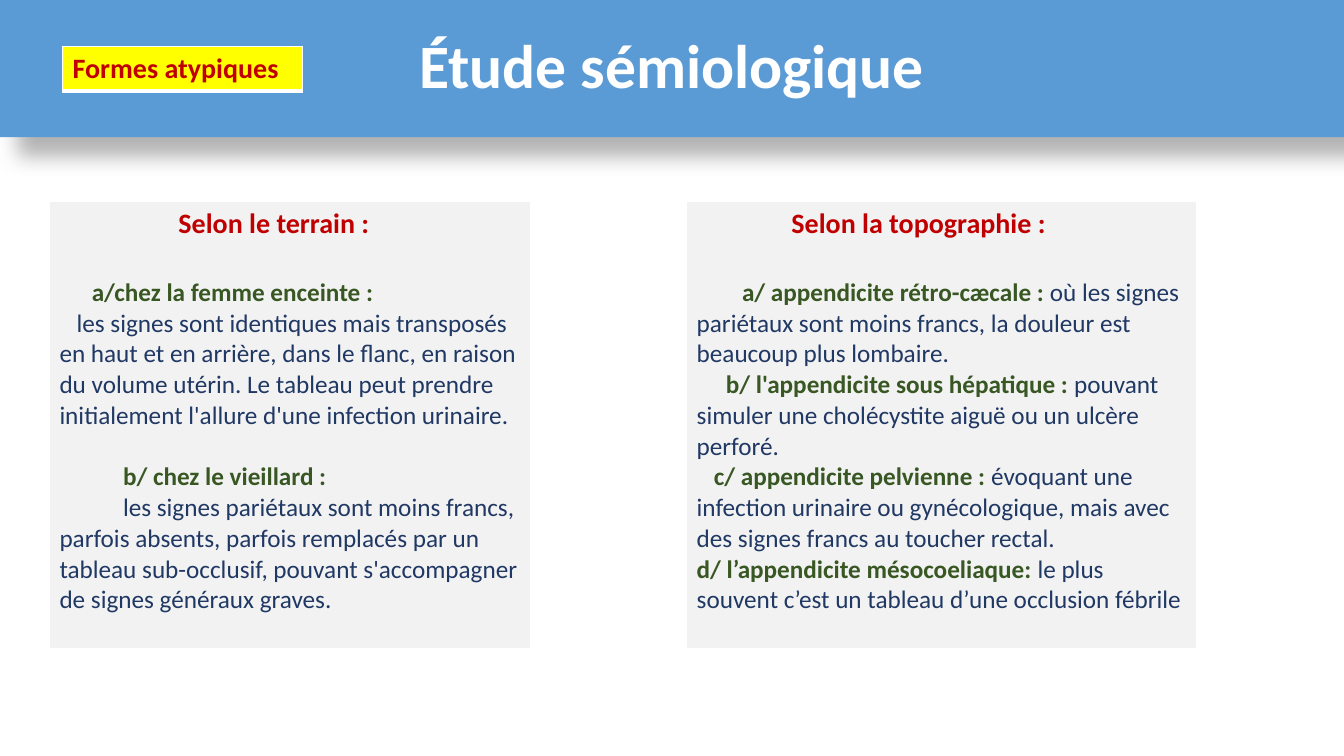
from lxml.etree import SubElement
from pptx import Presentation
from pptx.dml.color import RGBColor
from pptx.enum.text import MSO_ANCHOR, PP_ALIGN
from pptx.oxml import parse_xml
from pptx.oxml.ns import nsdecls, qn
from pptx.util import Inches, Pt

FONT = "Calibri"
WHITE, RED, GREEN, NAVY = "FFFFFF", "C00000", "385723", "203864"
BLUE, YELLOW, GREY = "5B9BD5", "FFFF00", "F2F2F2"

# Each paragraph: first-line indent (inches), space before (points), spans.
# Each span: text, size, colour, bold.
TERRAIN = [
    (1.18, 0, [("Selon le terrain :", 20, RED, True)]),
    (0.32, 26, [("a/chez la femme enceinte :", 18, GREEN, True)]),
    (0.17, 0, [("les signes sont identiques mais transposés en haut et en arrière, "
                "dans le flanc, en raison du volume utérin. Le tableau peut prendre "
                "initialement l'allure d'une infection urinaire.", 18, NAVY, False)]),
    (0.63, 22, [("b/ chez le vieillard :", 18, GREEN, True)]),
    (0.63, 0, [("les signes pariétaux sont moins francs, parfois absents, parfois "
                "remplacés par un tableau sub-occlusif, pouvant s'accompagner de "
                "signes généraux graves.", 18, NAVY, False)]),
]
TOPOGRAPHIE = [
    (0.94, 0, [("Selon la topographie :", 20, RED, True)]),
    (0.45, 26, [("a/ appendicite rétro-cæcale : ", 18, GREEN, True),
                ("où les signes pariétaux sont moins francs, la douleur est "
                 "beaucoup plus lombaire.", 18, NAVY, False)]),
    (0.29, 0, [("b/ l'appendicite sous hépatique : ", 18, GREEN, True),
               ("pouvant simuler une cholécystite aiguë ou un ulcère perforé.",
                18, NAVY, False)]),
    (0.17, 0, [("c/ appendicite pelvienne : ", 18, GREEN, True),
               ("évoquant une infection urinaire ou gynécologique, mais avec des "
                "signes francs au toucher rectal.", 18, NAVY, False)]),
    (0, 0, [("d/ l’appendicite mésocoeliaque: ", 18, GREEN, True),
            ("le plus souvent c’est un tableau d’une occlusion fébrile",
             18, NAVY, False)]),
]
FORMES = [(0, 0, [("Formes atypiques", 20, RED, True)])]


def paint(fill, colour):
    fill.solid()
    fill.fore_color.rgb = RGBColor.from_string(colour)


def add_span(para, text, size, colour, bold):
    span = para.add_run()
    span.text = text
    span.font.name = FONT
    span.font.size = Pt(size)
    span.font.bold = bold
    span.font.color.rgb = RGBColor.from_string(colour)


def add_shadow(shape):
    shape._element.spPr.append(parse_xml(
        f'<a:effectLst {nsdecls("a")}>'
        f'<a:outerShdw blurRad="{Pt(15)}" dist="{Pt(18)}" dir="2700000" algn="tl" rotWithShape="0">'
        '<a:srgbClr val="000000"><a:alpha val="30000"/></a:srgbClr>'
        '</a:outerShdw></a:effectLst>'))


def add_borders(cell):
    """Draw white cell borders, thicker at the bottom."""
    properties = cell._tc.get_or_add_tcPr()
    for side, width in (("L", 1), ("R", 1), ("T", 1), ("B", 3)):
        line = SubElement(properties, qn(f"a:ln{side}"), w=str(Pt(width)))
        fill = SubElement(line, qn("a:solidFill"))
        SubElement(fill, qn("a:srgbClr"), val=WHITE)


def place_title(page, left, top, width, height):
    title = page.shapes.title
    title.left, title.top = Inches(left), Inches(top)
    title.width, title.height = Inches(width), Inches(height)
    paint(title.fill, BLUE)
    add_shadow(title)
    frame = title.text_frame
    frame.word_wrap = True
    frame.vertical_anchor = MSO_ANCHOR.MIDDLE
    para = frame.paragraphs[0]
    para.alignment = PP_ALIGN.CENTER
    para.line_spacing = 0.9
    add_span(para, "Étude sémiologique", 44, WHITE, True)


def add_panel(page, left, top, width, height, colour, paragraphs):
    """Add a one-cell table filled with the given paragraphs."""
    table = page.shapes.add_table(1, 1, Inches(left), Inches(top),
                                  Inches(width), Inches(height)).table
    table.first_row = table.horz_banding = False
    cell = table.cell(0, 0)
    add_borders(cell)
    paint(cell.fill, colour)
    frame = cell.text_frame
    for index, (indent, space, spans) in enumerate(paragraphs):
        para = frame.add_paragraph() if index else frame.paragraphs[0]
        properties = para._p.get_or_add_pPr()
        properties.set("marL", "0")
        properties.set("indent", str(Inches(indent)))
        para.space_before = Pt(space)
        for span in spans:
            add_span(para, *span)


def main():
    deck = Presentation()
    deck.slide_width, deck.slide_height = Inches(13.33), Inches(7.5)
    page = deck.slides.add_slide(deck.slide_layouts[5])
    place_title(page, 0, 0, 13.33, 1.36)
    add_panel(page, 0.49, 2, 4.77, 4.45, GREY, TERRAIN)
    add_panel(page, 0.62, 0.46, 2.38, 0.43, YELLOW, FORMES)
    add_panel(page, 6.81, 2, 5.06, 4.45, GREY, TOPOGRAPHIE)
    deck.save("out.pptx")


if __name__ == "__main__":
    main()
